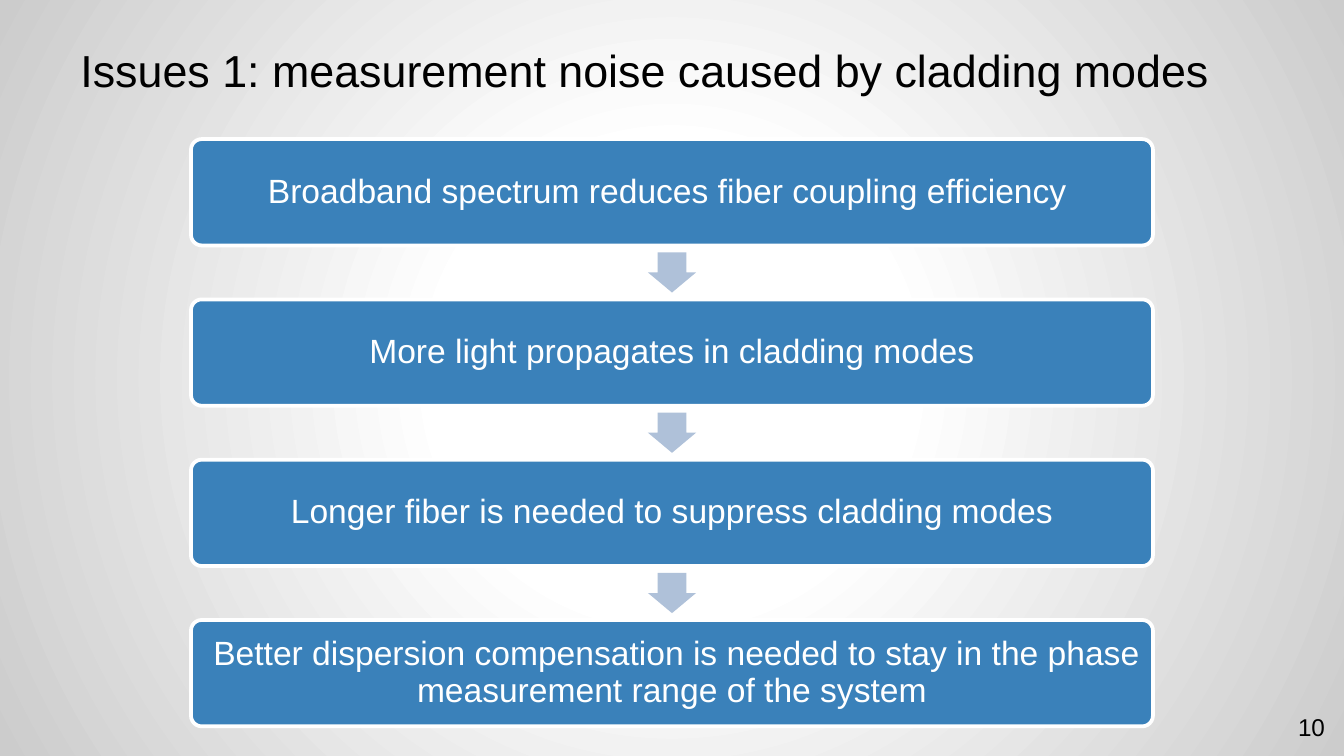
"""Build a slide that shows the chain of consequences of cladding modes."""
from pptx import Presentation
from pptx.dml.color import RGBColor
from pptx.enum.shapes import MSO_SHAPE as Preset
from pptx.enum.text import MSO_ANCHOR as Anchor, PP_ALIGN as Align
from pptx.oxml import parse_xml
from pptx.oxml.ns import nsdecls
from pptx.util import Cm, Pt

COLORS = {
    "text": "000000",
    "center": "FFFFFF",
    "edge": "CCCCCC",
    "step": "3A81BA",
    "step_line": "FFFFFF",
    "step_text": "FFFFFF",
    "arrow": "AFC1D9",
}
FONT = "Arial"
STEPS = [
    "Broadband spectrum reduces fiber coupling efficiency ",
    "More light propagates in cladding modes",
    "Longer fiber is needed to suppress cladding modes",
    " Better dispersion compensation is needed to stay in the phase "
    "measurement range of the system",
]
STEP_LEFT, STEP_TOP, STEP_WIDTH, STEP_HEIGHT = 3.61, 2.63, 18.18, 2.01
STEP_PITCH = 3.03
ARROW_LENGTH, ARROW_WIDTH = 0.76, 0.91


def rgb(name):
    return RGBColor.from_string(COLORS[name])


def set_background(slide):
    stops = [(0, "center"), (30, "center"), (100, "edge")]
    stop_xml = "".join(
        f'<a:gs pos="{percent * 1000}"><a:srgbClr val="{COLORS[name]}"/></a:gs>'
        for percent, name in stops
    )
    background = parse_xml(
        f'<p:bg {nsdecls("p", "a")}><p:bgPr><a:gradFill rotWithShape="1">'
        f"<a:gsLst>{stop_xml}</a:gsLst>"
        '<a:path path="circle"><a:fillToRect l="50000" t="50000" r="50000" b="50000"/></a:path>'
        "</a:gradFill><a:effectLst/></p:bgPr></p:bg>"
    )
    slide.element.cSld.insert(0, background)


def write(frame, text, size, color, align, anchor, inset=0.25):
    frame.word_wrap = True
    frame.vertical_anchor = anchor
    frame.margin_left = frame.margin_right = Cm(inset)
    frame.margin_top = frame.margin_bottom = Cm(inset)
    line = frame.paragraphs[0]
    line.alignment = align
    run = line.add_run()
    run.text = text
    run.font.name = FONT
    run.font.size = Pt(size)
    run.font.color.rgb = rgb(color)
    return line


def add_label(slide, text, box, size, align, anchor):
    label = slide.shapes.add_textbox(*map(Cm, box))
    write(label.text_frame, text, size, "text", align, anchor)


def add_step(slide, text, top):
    step = slide.shapes.add_shape(
        Preset.ROUNDED_RECTANGLE,
        Cm(STEP_LEFT), Cm(top), Cm(STEP_WIDTH), Cm(STEP_HEIGHT),
    )
    step.adjustments[0] = 0.1
    step.shadow.inherit = False
    step.fill.solid()
    step.fill.fore_color.rgb = rgb("step")
    step.line.color.rgb = rgb("step_line")
    step.line.width = Pt(2)
    line = write(step.text_frame, text, 18, "step_text", Align.CENTER, Anchor.MIDDLE, 0.15)
    line.line_spacing = 0.9


def add_arrow(slide, middle):
    left = STEP_LEFT + (STEP_WIDTH - ARROW_LENGTH) / 2
    arrow = slide.shapes.add_shape(
        Preset.RIGHT_ARROW,
        Cm(left), Cm(middle - ARROW_WIDTH / 2), Cm(ARROW_LENGTH), Cm(ARROW_WIDTH),
    )
    arrow.rotation = 90
    arrow.adjustments[0] = 0.6
    arrow.adjustments[1] = 0.5
    arrow.shadow.inherit = False
    arrow.fill.solid()
    arrow.fill.fore_color.rgb = rgb("arrow")
    arrow.line.fill.background()


def main():
    deck = Presentation()
    deck.slide_width, deck.slide_height = Cm(25.4), Cm(14.29)
    slide = deck.slides.add_slide(deck.slide_layouts[6])
    set_background(slide)
    add_label(slide, "Issues 1: measurement noise caused by cladding modes",
              (1.27, -0.31, 22.86, 2.39), 24, Align.LEFT, Anchor.BOTTOM)
    for index, text in enumerate(STEPS):
        top = STEP_TOP + index * STEP_PITCH
        if index:
            add_arrow(slide, top - (STEP_PITCH - STEP_HEIGHT) / 2)
        add_step(slide, text, top)
    add_label(slide, "10", (23.77, 13.2, 1.52, 1.09), 13, Align.RIGHT, Anchor.MIDDLE)
    deck.save("out.pptx")


if __name__ == "__main__":
    main()
